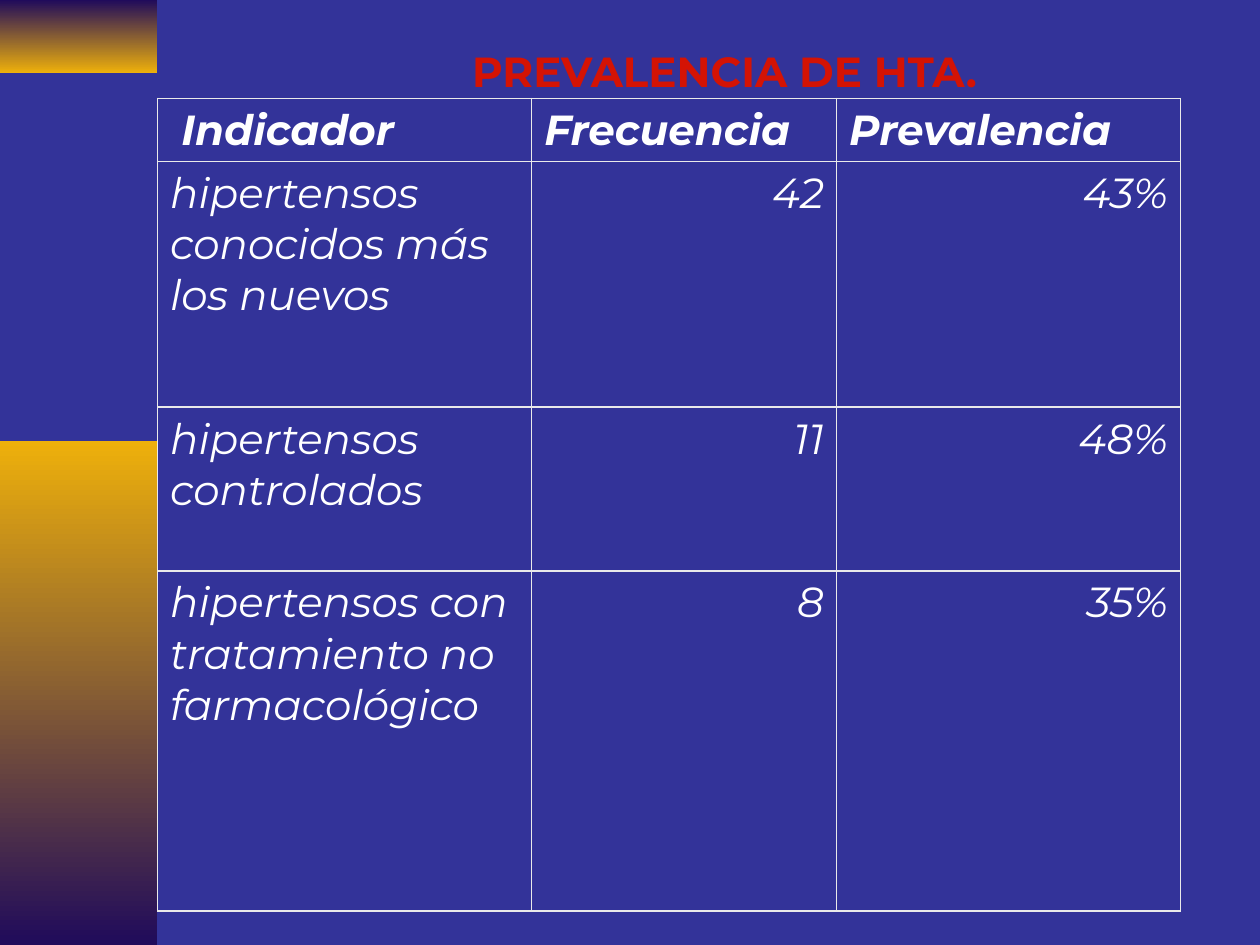
from dataclasses import dataclass
from lxml.etree import SubElement
from pptx import Presentation
from pptx.dml.color import RGBColor as RGB
from pptx.enum.shapes import MSO_SHAPE as Shape
from pptx.enum.text import MSO_AUTO_SIZE as AutoSize, PP_ALIGN as Align
from pptx.oxml.ns import qn
from pptx.util import Inches, Pt


@dataclass(frozen=True)
class Theme:
    background: str = "333399"
    gold: str = "EEB00B"
    night: str = "200B5B"
    title: str = "D41304"
    text: str = "FFFFFF"
    border: str = "EAEAEA"
    font: str = "Montserrat"
    size: int = 24
    border_width: int = 1


@dataclass(frozen=True)
class Band:
    top: float
    height: float
    start: str
    end: str


T = Theme()
WIDTH, HEIGHT = 10, 7.5
SIDE = WIDTH / 8
BANDS = (Band(0, 0.58, T.night, T.gold),
         Band(3.5, 4, T.gold, T.night))
TABLE_TOP = 0.78
COLS = (2.97, 2.42, 2.73)
ROW_HEIGHTS = (0.5, 1.95, 1.3, 2.7)
HEADER_INDENT = 0.19
ROWS = (
    ("Indicador", "Frecuencia", "Prevalencia"),
    ("hipertensos conocidos más los nuevos", "42", "43%"),
    ("hipertensos controlados", "11", "48%"),
    ("hipertensos con tratamiento no farmacológico", "8", "35%"),
)


def write(tf, text: str, align: Align, **formats) -> None:
    p = tf.paragraphs[0]
    p.alignment = align
    r = p.add_run()
    r.text = text
    color = formats.pop("color", T.text)
    for name, value in {"name": T.font, "size": Pt(T.size), **formats}.items():
        setattr(r.font, name, value)
    r.font.color.rgb = RGB.from_string(color)


def add_band(s, band: Band) -> None:
    sp = s.shapes.add_shape(Shape.RECTANGLE, 0, Inches(band.top),
                            Inches(SIDE), Inches(band.height))
    sp.shadow.inherit = False
    sp.line.fill.background()
    sp.fill.gradient()
    sp.fill.gradient_angle = 270
    for stop, color in zip(sp.fill.gradient_stops, (band.start, band.end)):
        stop.color.rgb = RGB.from_string(color)
    for stop, position in zip(sp.fill.gradient_stops, (0, 1)):
        stop.position = position


def add_title(s, text: str) -> None:
    sp = s.shapes.add_textbox(Inches(3.52), Inches(0.31), Inches(4.46), Inches(0.5))
    tf = sp.text_frame
    tf.word_wrap = False
    tf.auto_size = AutoSize.SHAPE_TO_FIT_TEXT
    write(tf, text, Align.CENTER, bold=True, color=T.title)


def style_cell(cell) -> None:
    """Draw the four borders and leave the cell unfilled."""
    tc_pr = cell._tc.get_or_add_tcPr()
    for side in ("a:lnL", "a:lnR", "a:lnT", "a:lnB"):
        ln = SubElement(tc_pr, qn(side), w=str(Pt(T.border_width)))
        fill = SubElement(ln, qn("a:solidFill"))
        SubElement(fill, qn("a:srgbClr"), val=T.border)
    cell.fill.background()


def add_table(s) -> None:
    frame = s.shapes.add_table(len(ROWS), len(COLS), Inches(SIDE), Inches(TABLE_TOP),
                               Inches(sum(COLS)), Inches(sum(ROW_HEIGHTS)))
    table = frame.table
    table.horz_banding = False
    for col, width in zip(table.columns, COLS):
        col.width = Inches(width)
    for row, height in zip(table.rows, ROW_HEIGHTS):
        row.height = Inches(height)
    for i, texts in enumerate(ROWS):
        for j, text in enumerate(texts):
            cell = table.cell(i, j)
            style_cell(cell)
            align = Align.RIGHT if i and j else Align.LEFT
            write(cell.text_frame, text, align, bold=i == 0, italic=True)
    table.cell(0, 0).margin_left = Inches(HEADER_INDENT)


def main() -> None:
    prs = Presentation()
    prs.slide_width, prs.slide_height = Inches(WIDTH), Inches(HEIGHT)
    s = prs.slides.add_slide(prs.slide_layouts[6])
    s.background.fill.solid()
    s.background.fill.fore_color.rgb = RGB.from_string(T.background)
    for band in BANDS:
        add_band(s, band)
    add_title(s, "PREVALENCIA DE HTA.")
    add_table(s)
    prs.save("out.pptx")


if __name__ == "__main__":
    main()
